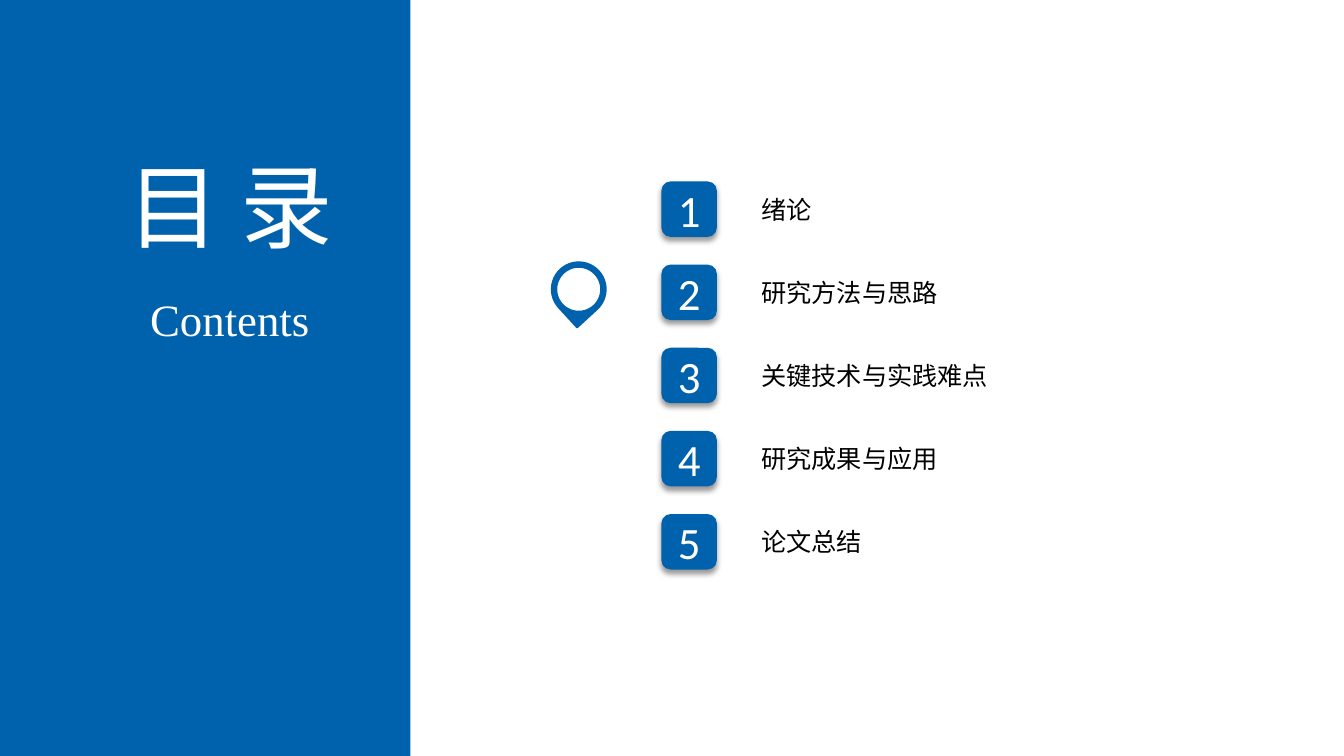
from pptx import Presentation
from pptx.dml.color import RGBColor
from pptx.enum.shapes import MSO_SHAPE
from pptx.enum.text import MSO_ANCHOR, MSO_AUTO_SIZE, PP_ALIGN
from pptx.oxml import parse_xml
from pptx.oxml.ns import nsdecls, qn
from pptx.util import Inches, Pt

# Content
TITLE, SUBTITLE = "目 录", "Contents"
CHAPTERS = ["绪论", "研究方法与思路", "关键技术与实践难点", "研究成果与应用", "论文总结"]

THEME = {
    "blue": RGBColor.from_string("0062AC"),
    "white": RGBColor.from_string("FFFFFF"),
    "black": RGBColor.from_string("000000"),
    "cjk": "Noto Sans CJK SC", "serif": "Times New Roman", "digit": "Calibri",
    "title": 66, "large": 32, "label": 18,
}

# Layout in inches
PANEL_W = 4.07
BADGE_X, BADGE_Y, BADGE, PITCH = 6.56, 1.8, 0.55, 0.825
LABEL_X, LABEL_H, CHAR_W, INSET = 7.45, 0.4, 0.25, 0.1
PIN_X, PIN_Y, PIN, RIM = 5.47, 2.6, 0.54, 0.05

SHADOW = (f'<a:outerShdw {nsdecls("a")} blurRad="{Pt(4)}" dist="{Pt(3)}" dir="5400000" '
          'algn="t" rotWithShape="0"><a:srgbClr val="000000"><a:alpha val="40000"/>'
          '</a:srgbClr></a:outerShdw>')


def write(shape, text, font, size, color):
    tf = shape.text_frame
    tf.text = text
    p = tf.paragraphs[0]
    p.alignment = PP_ALIGN.CENTER
    r = p.runs[0]
    r.font.name, r.font.size, r.font.color.rgb = THEME[font], Pt(THEME[size]), THEME[color]
    r.font._element.append(
        parse_xml(f'<a:ea {nsdecls("a")} typeface="{THEME[font]}"/>'))
    return tf


def add_text(shapes, box, *style):
    tf = write(shapes.add_textbox(*map(Inches, box)), *style)
    tf.word_wrap = False
    tf.auto_size = MSO_AUTO_SIZE.SHAPE_TO_FIT_TEXT


def add_block(shapes, kind, box, fill, outlined=False):
    sp = shapes.add_shape(kind, *map(Inches, box))
    sp.shadow.inherit = False
    sp.fill.solid()
    sp.fill.fore_color.rgb = THEME[fill]
    if outlined:
        sp.line.color.rgb, sp.line.width = THEME["blue"], Pt(1)
    else:
        sp.line.fill.background()
    return sp


prs = Presentation()
prs.slide_width, prs.slide_height = Inches(13.33), Inches(7.5)
s = prs.slides.add_slide(prs.slide_layouts[6])

# Numbered chapters
for i, chapter in enumerate(CHAPTERS):
    y = BADGE_Y + i * PITCH
    badge = add_block(s.shapes, MSO_SHAPE.ROUNDED_RECTANGLE, (BADGE_X, y, BADGE, BADGE), "blue")
    badge._element.spPr.find(qn("a:effectLst")).append(parse_xml(SHADOW))
    tf = write(badge, str(i + 1), "digit", "large", "white")
    tf.vertical_anchor = MSO_ANCHOR.MIDDLE
    label_box = (LABEL_X, y + (BADGE - LABEL_H) / 2, len(chapter) * CHAR_W + 2 * INSET, LABEL_H)
    add_text(s.shapes, label_box, chapter, "cjk", "label", "black")

# Title panel
add_block(s.shapes, MSO_SHAPE.RECTANGLE, (0, 0, PANEL_W, 7.5), "blue")
add_text(s.shapes, (1.02, 1.43, 2.52, 1.21), TITLE, "cjk", "title", "white")
add_text(s.shapes, (1.38, 2.84, 1.8, 0.64), SUBTITLE, "serif", "large", "white")

# Location pin
pin = s.shapes.add_group_shape()
drop = add_block(pin.shapes, MSO_SHAPE.TEAR, (PIN_X, PIN_Y, PIN, PIN), "blue", True)
drop.rotation = 137.5
hole = PIN - 2 * RIM
add_block(pin.shapes, MSO_SHAPE.OVAL, (PIN_X + RIM, PIN_Y + RIM, hole, hole), "white", True)

prs.save("out.pptx")
